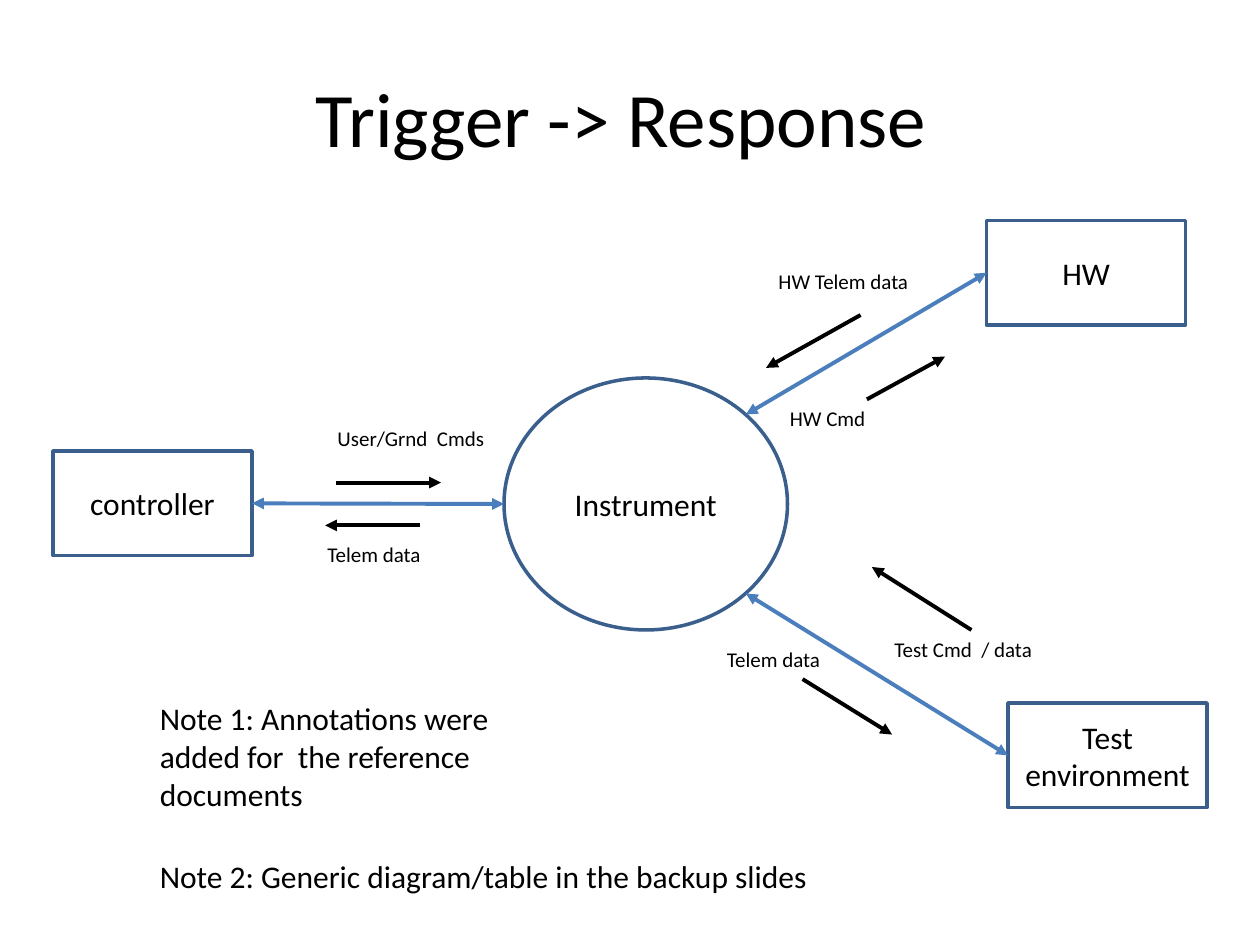
from typing import NamedTuple

from lxml.etree import SubElement as Sub
from pptx import Presentation
from pptx.dml.color import RGBColor as Rgb
from pptx.enum.shapes import MSO_CONNECTOR as Conn, MSO_SHAPE as Form
from pptx.enum.text import MSO_ANCHOR as Anchor, PP_ALIGN as Align
from pptx.oxml.ns import qn
from pptx.util import Inches, Pt

BLACK, EDGE, LINK = "000000", "3A5F8C", "4B7EBC"


class Node(NamedTuple):
    text: str
    left: float
    top: float
    wide: float = 1.58
    high: float = 0.83
    form: Form = Form.RECTANGLE


class Link(NamedTuple):
    node: str
    side: int
    start: tuple
    end: tuple


class Flow(NamedTuple):
    text: str
    left: float
    top: float
    start: tuple
    end: tuple


class Note(NamedTuple):
    text: str
    top: float
    wide: float
    high: float
    wrap: bool


NODES = [
    Node("Instrument", 4, 3, 2.25, 2, Form.OVAL),
    Node("controller", 0.42, 3.58),
    Node("HW", 7.83, 1.75),
    Node("Test environment", 8, 5.58),
]
LINKS = [
    Link("controller", 3, (2, 4), (4, 4)),
    Link("Test environment", 1, (8, 6), (5.92, 4.71)),
    Link("HW", 1, (7.83, 2.17), (5.92, 3.29)),
]
FLOWS = [
    Flow("User/Grnd  Cmds", 2.58, 3.33, (2.67, 3.83), (3.5, 3.83)),
    Flow("Telem data", 2.5, 4.25, (3.33, 4.17), (2.58, 4.17)),
    Flow("HW Telem data", 6.08, 2.08, (6.83, 2.5), (6.08, 2.92)),
    Flow("HW Cmd", 6.17, 3.17, (6.88, 3.17), (7.5, 2.83)),
    Flow("Test Cmd  / data", 7, 5, (7.71, 5), (6.92, 4.5)),
    Flow("Telem data", 5.67, 5.08, (6.37, 5.39), (7.08, 5.83)),
]
NOTES = [
    Note("Note 2: Generic diagram/table in the backup slides", 6.75, 5.4, 0.4, False),
    Note("Note 1: Annotations were added for  the reference documents", 5.5, 3, 1.01, True),
]


def paint(part, tint: str) -> None:
    part.rgb = Rgb.from_string(tint)


def write(shape, text: str, *, size: float = 18, align=Align.LEFT,
          anchor=Anchor.TOP, wrap: bool = True) -> None:
    frame = shape.text_frame
    frame.word_wrap = wrap
    frame.vertical_anchor = anchor
    para = frame.paragraphs[0]
    para.alignment = align
    run = para.add_run()
    run.text = text
    run.font.size = Pt(size)
    run.font.name = "Calibri"
    paint(run.font.color, BLACK)


def label(slide, text: str, left: float, top: float, wide: float, high: float, **style) -> None:
    box = slide.shapes.add_textbox(Inches(left), Inches(top), Inches(wide), Inches(high))
    write(box, text, **style)


def draw_node(slide, node: Node):
    shape = slide.shapes.add_shape(
        node.form, Inches(node.left), Inches(node.top), Inches(node.wide), Inches(node.high))
    shape.shadow.inherit = False
    shape.fill.background()
    paint(shape.line.color, EDGE)
    shape.line.width = Pt(2)
    write(shape, node.text, align=Align.CENTER, anchor=Anchor.MIDDLE)
    return shape


def arrow(slide, start: tuple, end: tuple, tint: str, *, both: bool = False):
    line = slide.shapes.add_connector(
        Conn.STRAIGHT, *(Inches(value) for value in (*start, *end)))
    paint(line.line.color, tint)
    line.line.width = Pt(2.25)
    edge = line.line._get_or_add_ln()
    for tag in ("a:headEnd", "a:tailEnd") if both else ("a:tailEnd",):
        Sub(edge, qn(tag), type="triangle")
    Sub(line._element.spPr, qn("a:effectLst"))
    return line


def main() -> None:
    deck = Presentation()
    deck.slide_width, deck.slide_height = Inches(10), Inches(7.5)
    slide = deck.slides.add_slide(deck.slide_layouts[5])
    title = slide.shapes.title
    title.left, title.top = Inches(0.5), Inches(0.3)
    title.width, title.height = Inches(9), Inches(1.25)
    write(title, "Trigger -> Response ", size=44, align=Align.CENTER, anchor=Anchor.MIDDLE)

    shapes = {node.text: draw_node(slide, node) for node in NODES}
    for link in LINKS:
        line = arrow(slide, link.start, link.end, LINK, both=True)
        line.begin_connect(shapes[link.node], link.side)
    for flow in FLOWS:
        label(slide, flow.text, flow.left, flow.top, 1.42, 0.3, size=12)
        arrow(slide, flow.start, flow.end, BLACK)
    for note in NOTES:
        label(slide, note.text, 1.17, note.top, note.wide, note.high, wrap=note.wrap)
    deck.save("out.pptx")


if __name__ == "__main__":
    main()
